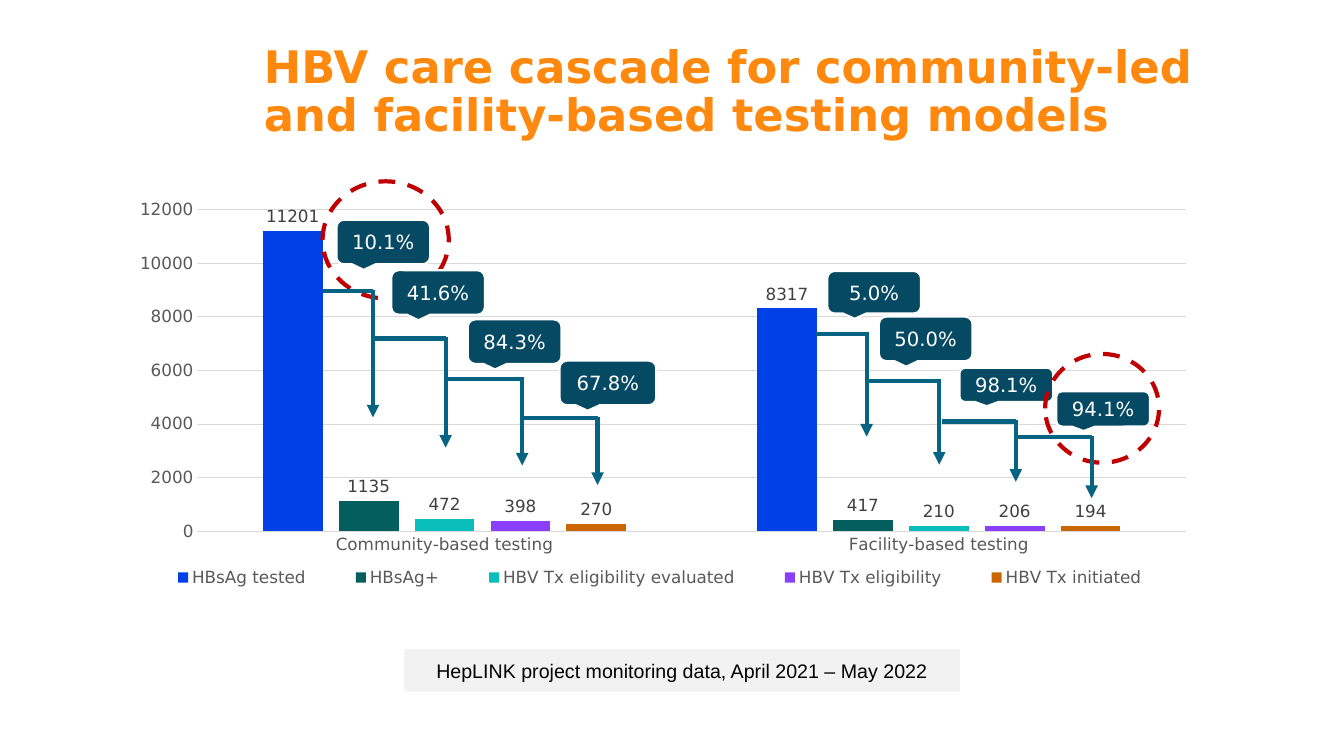
"""Build the HBV care cascade slide: clustered columns with step arrows and percentages."""
from lxml.etree import SubElement
from pptx import Presentation
from pptx.chart.data import CategoryChartData
from pptx.dml.color import RGBColor
from pptx.enum.chart import XL_CHART_TYPE, XL_LABEL_POSITION, XL_LEGEND_POSITION, XL_TICK_MARK
from pptx.enum.dml import MSO_LINE
from pptx.enum.shapes import MSO_CONNECTOR, MSO_SHAPE
from pptx.enum.text import MSO_ANCHOR, PP_ALIGN
from pptx.oxml import parse_xml
from pptx.oxml.ns import nsdecls, qn
from pptx.util import Cm, Pt

ORANGE = RGBColor(0xFF, 0x89, 0x0E)
WHITE = RGBColor(0xFF, 0xFF, 0xFF)
BLACK = RGBColor(0, 0, 0)
NAVY = RGBColor(0x05, 0x4A, 0x62)
TEAL = RGBColor(0x07, 0x63, 0x82)
RED = RGBColor(0xC0, 0, 0)
PALE = RGBColor(0xF2, 0xF2, 0xF2)
GRID = RGBColor(0xD9, 0xD9, 0xD9)
AXIS_GREY = RGBColor(0x59, 0x59, 0x59)
LABEL_GREY = RGBColor(0x40, 0x40, 0x40)

TITLE = "HBV care cascade for community-led and facility-based testing models"
SOURCE = "HepLINK project monitoring data, April 2021 – May 2022"
CATEGORIES = ["Community-based testing", "Facility-based testing"]
SERIES = [
    ("HBsAg tested", (11201, 8317), RGBColor(0x00, 0x40, 0xE6)),
    ("HBsAg+", (1135, 417), RGBColor(0x04, 0x5E, 0x5D)),
    ("HBV Tx eligibility evaluated", (472, 210), RGBColor(0x08, 0xBD, 0xBA)),
    ("HBV Tx eligibility", (398, 206), RGBColor(0x8A, 0x3F, 0xFC)),
    ("HBV Tx initiated", (270, 194), RGBColor(0xCA, 0x67, 0x00)),
]
CALLOUTS = [
    ("10.1%", 8.48, 5.54, 2.36, 1.12),
    ("41.6%", 9.86, 6.81, 2.36, 1.12),
    ("84.3%", 11.79, 8.05, 2.36, 1.12),
    ("67.8%", 14.1, 9.09, 2.44, 1.12),
    ("5.0%", 20.85, 6.83, 2.36, 1.07),
    ("50.0%", 22.15, 7.98, 2.36, 1.12),
    ("98.1%", 24.18, 9.27, 2.36, 0.86),
    ("94.1%", 26.62, 9.86, 2.36, 0.89),
]
FIRST_RING = (8.13, 4.57, 3.18, 2.95)
LAST_RING = (26.34, 8.92, 2.87, 2.74)
STEPS = [
    (8.13, 7.34, 9.4, 10.52),
    (9.4, 8.53, 11.23, 11.28),
    (11.3, 9.55, 13.16, 11.73),
    (13.16, 10.54, 15.06, 12.22),
    (20.57, 8.41, 21.84, 11),
    (21.84, 9.6, 23.67, 11.71),
    (23.75, 10.62, 25.6, 12.14),
    (25.6, 11.02, 27.51, 12.55),
]
PLOT_AREA = (0.07, 0.04, 0.93, 0.8)
LEGEND_AREA = (0.01, 0.92, 0.99, 0.07)


def style(font, size, color, name="DejaVu Sans", bold=False):
    """Apply font settings."""
    for key, value in {"size": Pt(size), "name": name, "bold": bold}.items():
        setattr(font, key, value)
    font.color.rgb = color


def write(sp, text, align, *font):
    """Put one middle-anchored paragraph in a shape."""
    tf = sp.text_frame
    for key, value in {"word_wrap": True, "vertical_anchor": MSO_ANCHOR.MIDDLE}.items():
        setattr(tf, key, value)
    p = tf.paragraphs[0]
    p.alignment = align
    r = p.add_run()
    r.text = text
    style(r.font, *font)
    return tf


def add_shape(s, kind, box, fill=None, line=None, width=0):
    """Add a preset shape with the given fill and outline."""
    sp = s.shapes.add_shape(kind, *map(Cm, box))
    sp.shadow.inherit = False
    for part, color in ((sp.fill, fill), (sp.line.fill, line)):
        if color is None:
            part.background()
        else:
            part.solid()
            part.fore_color.rgb = color
    if line is not None:
        sp.line.width = Pt(width)
    return sp


def add_ring(s, box):
    """Add a dashed ring."""
    add_shape(s, MSO_SHAPE.OVAL, box, None, RED, 3).line.dash_style = MSO_LINE.DASH


def add_line(s, points, arrow=False):
    """Add a straight connector, with an arrowhead at its end if asked."""
    c = s.shapes.add_connector(MSO_CONNECTOR.STRAIGHT, *map(Cm, points))
    c.line.color.rgb = TEAL
    c.line.width = Pt(3)
    spPr = c.element.spPr
    if arrow:
        SubElement(spPr.find(qn("a:ln")), qn("a:tailEnd"), type="triangle")
    SubElement(spPr, qn("a:effectLst"))


def place(parent, index, area, target=""):
    """Fix the layout of a chart part as fractions of the chart."""
    for old in parent.findall(qn("c:layout")):
        parent.remove(old)
    sizes = "".join(f'<c:{k} val="{v}"/>' for k, v in zip("xywh", area))
    parent.insert(index, parse_xml(
        f'<c:layout {nsdecls("c")}><c:manualLayout>{target}'
        f'<c:xMode val="edge"/><c:yMode val="edge"/>{sizes}</c:manualLayout></c:layout>'))


def add_cascade_chart(s):
    """Add the column chart."""
    data = CategoryChartData(number_format="General")
    data.categories = CATEGORIES
    for name, values, _ in SERIES:
        data.add_series(name, values)
    box = map(Cm, (3.1, 4.88, 26.8, 10.13))
    chart = s.shapes.add_chart(XL_CHART_TYPE.COLUMN_CLUSTERED, *box, data).chart
    style(chart.font, 12, BLACK)
    chart.has_title = False
    chart.has_legend = True
    legend = chart.legend
    legend.position = XL_LEGEND_POSITION.BOTTOM
    legend.include_in_layout = False
    style(legend.font, 12, AXIS_GREY)

    plot = chart.plots[0]
    for key, value in {"gap_width": 219, "overlap": -27, "vary_by_categories": False}.items():
        setattr(plot, key, value)
    for series, (_, _, color) in zip(plot.series, SERIES):
        series.format.fill.solid()
        series.format.fill.fore_color.rgb = color
        labels = series.data_labels
        labels.show_value = True
        labels.position = XL_LABEL_POSITION.OUTSIDE_END
        style(labels.font, 12, LABEL_GREY)

    cat, val = chart.category_axis, chart.value_axis
    for axis in (cat, val):
        axis.major_tick_mark = axis.minor_tick_mark = XL_TICK_MARK.NONE
        style(axis.tick_labels.font, 12, AXIS_GREY)
    for key, value in {"minimum_scale": 0, "maximum_scale": 12000, "major_unit": 2000}.items():
        setattr(val, key, value)
    val.format.line.fill.background()
    for line in (cat.format.line, val.major_gridlines.format.line):
        line.color.rgb = GRID
        line.width = Pt(0.75)

    place(chart.element.xpath("c:chart/c:plotArea")[0], 0, PLOT_AREA,
          '<c:layoutTarget val="inner"/>')
    place(chart.element.xpath("c:chart/c:legend")[0], 1, LEGEND_AREA)


def main():
    """Assemble and save the slide."""
    prs = Presentation()
    prs.slide_width, prs.slide_height = Cm(33.87), Cm(19.05)
    s = prs.slides.add_slide(prs.slide_layouts[6])

    title = s.shapes.add_textbox(*map(Cm, (6.65, 0.64, 25.04, 3.4)))
    tf = write(title, TITLE, PP_ALIGN.LEFT, 32, ORANGE, "DejaVu Sans", True)
    for side in ("left", "right", "top", "bottom"):
        setattr(tf, f"margin_{side}", 0)
    tf.paragraphs[0].line_spacing = 0.9

    add_cascade_chart(s)
    source = add_shape(s, MSO_SHAPE.RECTANGLE, (10.19, 16.36, 14, 1.07), PALE)
    write(source, SOURCE, PP_ALIGN.CENTER, 14, BLACK, "Arial")

    add_ring(s, FIRST_RING)
    for text, *box in CALLOUTS:
        sp = add_shape(s, MSO_SHAPE.ROUNDED_RECTANGULAR_CALLOUT, box, NAVY, WHITE, 1.5)
        write(sp, text, PP_ALIGN.CENTER, 14, WHITE)
    add_ring(s, LAST_RING)
    for left, top, right, bottom in STEPS:
        add_line(s, (left, top, right, top))
        add_line(s, (right, top - 0.04, right, bottom), arrow=True)

    prs.save("out.pptx")


if __name__ == "__main__":
    main()
